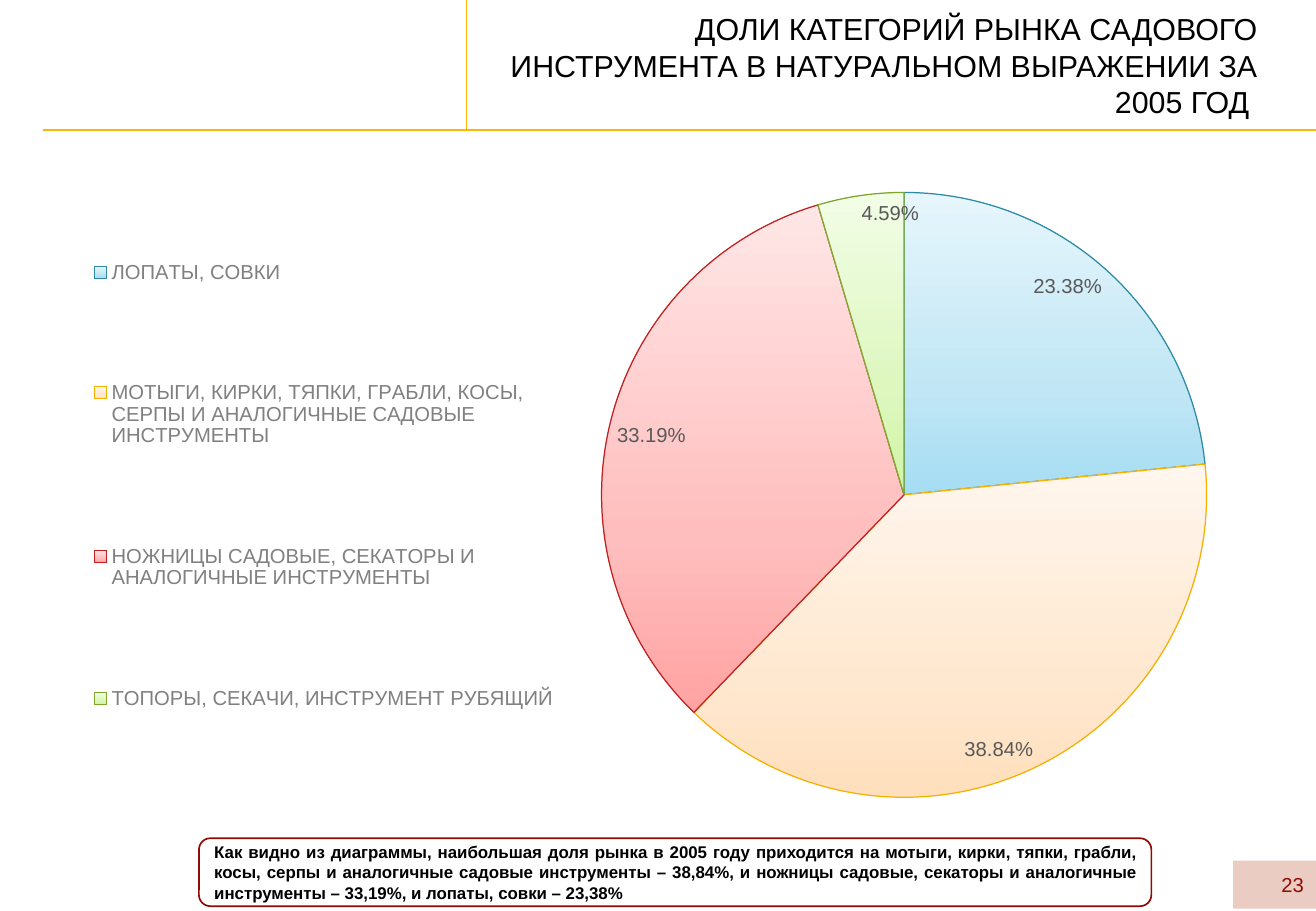
from copy import deepcopy
from dataclasses import dataclass

from lxml.etree import SubElement
from pptx import Presentation
from pptx.chart.data import CategoryChartData
from pptx.dml.color import RGBColor
from pptx.enum.chart import XL_CHART_TYPE, XL_LABEL_POSITION, XL_LEGEND_POSITION
from pptx.enum.shapes import MSO_CONNECTOR, MSO_SHAPE
from pptx.enum.text import MSO_ANCHOR, PP_ALIGN
from pptx.oxml import parse_xml
from pptx.oxml.ns import nsdecls, qn
from pptx.util import Cm, Pt


@dataclass(frozen=True)
class Theme:
    """Colours and type sizes of the deck."""

    font: str = "Arial"
    ink: str = "000000"
    rule: str = "FEB604"
    accent: str = "900B04"
    page_fill: str = "EACCC3"
    legend: str = "808080"
    label: str = "595959"
    title_size: int = 18
    chart_size: int = 12
    note_size: int = 10


@dataclass(frozen=True)
class Box:
    """A rectangle in centimetres."""

    left: float
    top: float
    width: float
    height: float

    def lengths(self):
        """Return the rectangle as slide lengths."""
        return Cm(self.left), Cm(self.top), Cm(self.width), Cm(self.height)


THEME = Theme()
SLIDE_WIDTH, SLIDE_HEIGHT = 27.51, 19.05
TITLE = "ДОЛИ КАТЕГОРИЙ РЫНКА САДОВОГО ИНСТРУМЕНТА В НАТУРАЛЬНОМ ВЫРАЖЕНИИ ЗА 2005 ГОД "
NOTE = (
    "Как видно из диаграммы, наибольшая доля рынка в 2005 году приходится на мотыги, "
    "кирки, тяпки, грабли, косы, серпы и аналогичные садовые инструменты – 38,84%, "
    "и ножницы садовые, секаторы и аналогичные инструменты – 33,19%, "
    "и лопаты, совки – 23,38%"
)
SHARES = [
    ("ЛОПАТЫ, СОВКИ", 0.2338, "2E8AA5", ("A5DDF3", "C1E6F5", "E6F6FC")),
    ("МОТЫГИ, КИРКИ, ТЯПКИ, ГРАБЛИ, КОСЫ, СЕРПЫ И АНАЛОГИЧНЫЕ САДОВЫЕ ИНСТРУМЕНТЫ",
     0.3884, "F5B000", ("FFDFBC", "FFE8D0", "FFF6ED")),
    ("НОЖНИЦЫ САДОВЫЕ, СЕКАТОРЫ И АНАЛОГИЧНЫЕ ИНСТРУМЕНТЫ",
     0.3319, "C02020", ("FFA3A3", "FFBEBE", "FFE6E6")),
    ("ТОПОРЫ, СЕКАЧИ, ИНСТРУМЕНТ РУБЯЩИЙ", 0.0459, "7FA52D", ("D0F5A3", "DDF7BF", "F2FDE6")),
]
GRADIENT_POSITIONS = (0, 0.35, 1)


def style_font(font, size, color, bold=False):
    """Set the face, size, colour and weight of a font."""
    font.name, font.size, font.bold = THEME.font, Pt(size), bold
    font.color.rgb = RGBColor.from_string(color)


def write_text(shape, text, size, color, alignment, bold=False):
    """Write one wrapped, vertically centred paragraph into a shape."""
    frame = shape.text_frame
    frame.text, frame.word_wrap = text, True
    frame.vertical_anchor = MSO_ANCHOR.MIDDLE
    para = frame.paragraphs[0]
    para.alignment = alignment
    for span in para.runs:
        style_font(span.font, size, color, bold)


def add_rule(slide, start, end, width):
    """Draw a straight rule between two points in centimetres."""
    rule = slide.shapes.add_connector(MSO_CONNECTOR.STRAIGHT, *map(Cm, start + end))
    rule.line.color.rgb = RGBColor.from_string(THEME.rule)
    rule.line.width = Pt(width)
    SubElement(rule.element.spPr, qn("a:effectLst"))


def add_header(slide, box):
    """Place the title with the rules to its left and below it."""
    bottom = box.top + box.height
    add_rule(slide, (0.89, bottom), (SLIDE_WIDTH, bottom), 1)
    add_rule(slide, (box.left, bottom), (box.left, box.top), 0.75)
    title = slide.shapes.add_textbox(*box.lengths())
    write_text(title, TITLE, THEME.title_size, THEME.ink, PP_ALIGN.RIGHT)


def add_page_number(slide, box):
    """Place the page number on its tinted block."""
    block = slide.shapes.add_shape(MSO_SHAPE.RECTANGLE, *box.lengths())
    block.shadow.inherit = False
    block.fill.solid()
    block.fill.fore_color.rgb = RGBColor.from_string(THEME.page_fill)
    block.line.fill.background()
    write_text(block, "23", THEME.chart_size, THEME.accent, PP_ALIGN.RIGHT)


def add_note(slide, box):
    """Place the conclusion in a rounded frame."""
    note = slide.shapes.add_shape(MSO_SHAPE.ROUNDED_RECTANGLE, *box.lengths())
    note.shadow.inherit = False
    note.fill.background()
    note.line.color.rgb = RGBColor.from_string(THEME.accent)
    note.line.width = Pt(1)
    write_text(note, NOTE, THEME.note_size, THEME.ink, PP_ALIGN.JUSTIFY, bold=True)


def set_layout(element, index, fractions, target=""):
    """Fix the position of a chart part as fractions of the chart."""
    for layout in element.findall(qn("c:layout")):
        element.remove(layout)
    modes = '<c:xMode val="edge"/><c:yMode val="edge"/>'
    sizes = "".join(f'<c:{key} val="{value}"/>' for key, value in zip("xywh", fractions))
    element.insert(index, parse_xml(
        f'<c:layout {nsdecls("c")}><c:manualLayout>{target}{modes}{sizes}'
        "</c:manualLayout></c:layout>"
    ))


def paint_slices(series):
    """Give each slice its outline and three-stop gradient."""
    fills = []
    for index, (_, _, outline, colors) in enumerate(SHARES):
        style = series.points[index].format
        style.line.color.rgb = RGBColor.from_string(outline)
        style.line.width = Pt(0.75)
        style.fill.gradient()
        style.fill.gradient_angle = 90
        fills.append((style.fill, colors))
    for stops in series._element.iter(qn("a:gsLst")):
        stops.append(deepcopy(stops[0]))
    for fill, colors in fills:
        for stop, position, color in zip(fill.gradient_stops, GRADIENT_POSITIONS, colors):
            stop.position = position
            stop.color.rgb = RGBColor.from_string(color)


def add_share_chart(slide, box):
    """Place the pie of market shares with its legend on the left."""
    data = CategoryChartData(number_format="0.00%")
    data.categories = [share[0] for share in SHARES]
    data.add_series("Series 1", [share[1] for share in SHARES])
    chart = slide.shapes.add_chart(XL_CHART_TYPE.PIE, *box.lengths(), data).chart
    chart.has_title = False
    style_font(chart.font, THEME.note_size, THEME.ink)
    chart.has_legend = True
    chart.legend.position = XL_LEGEND_POSITION.LEFT
    chart.legend.include_in_layout = False
    style_font(chart.legend.font, THEME.chart_size, THEME.legend)
    set_layout(chart.legend._element, 1, (0.01, 0.02, 0.39, 0.97))
    plot = chart.plots[0]
    plot.vary_by_categories = True
    plot.has_data_labels = True
    labels = plot.data_labels
    labels.show_value, labels.show_percentage = True, False
    labels.number_format, labels.number_format_is_linked = "0.00%", False
    labels.position = XL_LABEL_POSITION.INSIDE_END
    style_font(labels.font, THEME.chart_size, THEME.label)
    paint_slices(plot.series[0])
    plot_area = chart._chartSpace.find(".//" + qn("c:plotArea"))
    inner = '<c:layoutTarget val="inner"/>'
    set_layout(plot_area, 0, (0.437, 0.065, 0.506, 0.909), inner)


def main():
    """Build and save the deck."""
    deck = Presentation()
    deck.slide_width, deck.slide_height = Cm(SLIDE_WIDTH), Cm(SLIDE_HEIGHT)
    slide = deck.slides.add_slide(deck.slide_layouts[6])
    add_page_number(slide, Box(25.78, 18, 1.73, 1))
    add_header(slide, Box(9.75, 0, 16.79, 2.72))
    add_share_chart(slide, Box(1.65, 3.12, 25, 13.92))
    add_note(slide, Box(4.16, 17.53, 19.91, 1.42))
    deck.save("out.pptx")


if __name__ == "__main__":
    main()
